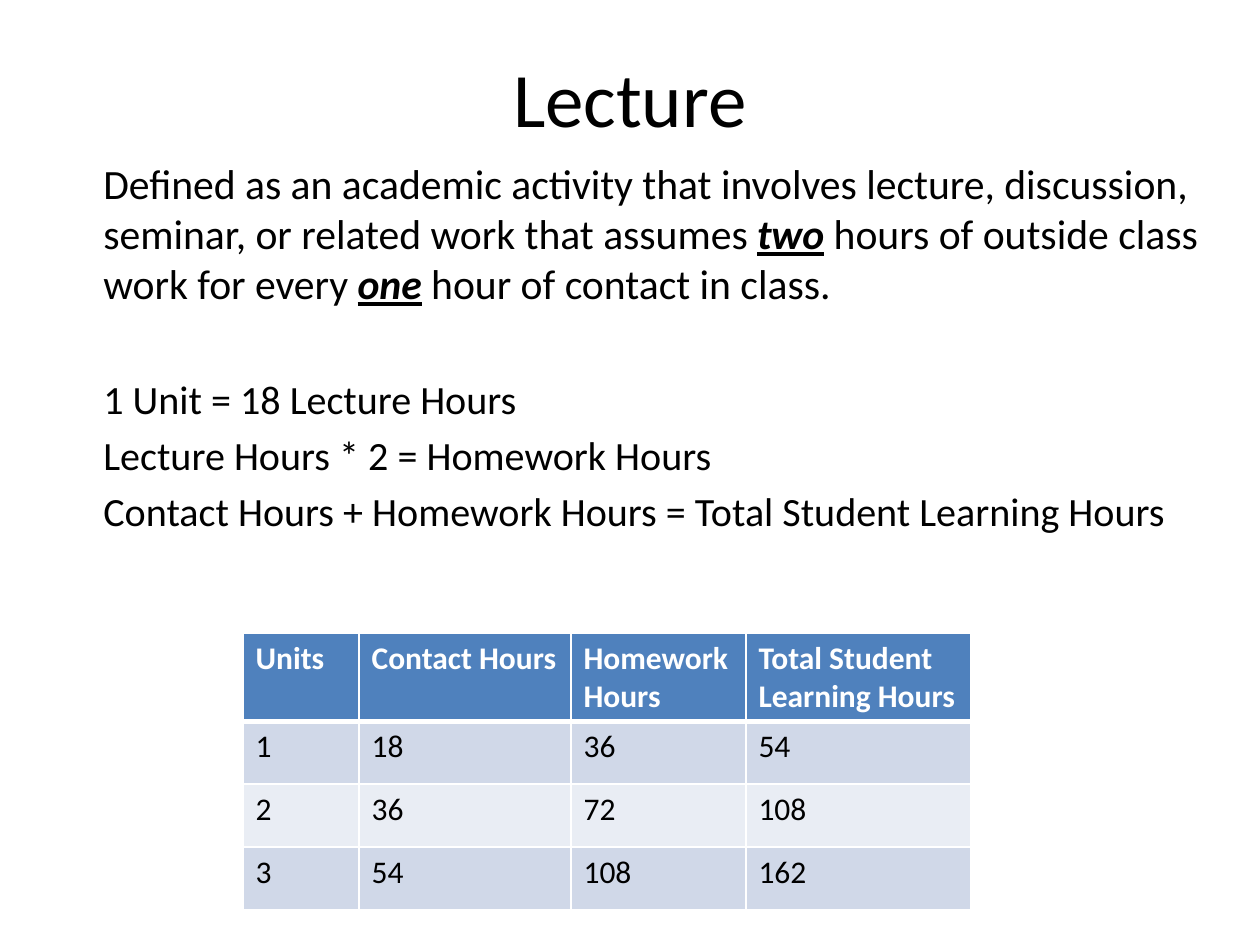
import lxml.etree
import pptx
import pptx.dml.color
import pptx.enum.text
import pptx.oxml.ns
import pptx.util

THEME = {
    "font": "Calibri",
    "text": "000000",
    "header_text": "FFFFFF",
    "header_fill": "4F81BD",
    "bands": ("D0D8E8", "E9EDF4"),
    "border": "FFFFFF",
    "title_size": 44,
    "definition_size": 23.8,
    "formula_size": 22.9,
    "table_size": 18,
}
EMPHASIS = {"bold": True, "italic": True, "underline": True}

DEFINITION = [
    ("Defined as an academic activity that involves lecture, discussion, "
     "seminar, or related work that assumes ", {}),
    ("two", EMPHASIS),
    (" hours of outside class work for every ", {}),
    ("one", EMPHASIS),
    (" hour of contact in class.", {}),
]
FORMULAS = [
    "1 Unit = 18 Lecture Hours",
    "Lecture Hours * 2 = Homework Hours",
    "Contact Hours + Homework Hours = Total Student Learning Hours",
]
HOURS = [
    ("Units", "Contact Hours", "Homework Hours", "Total Student Learning Hours"),
    ("1", "18", "36", "54"),
    ("2", "36", "72", "108"),
    ("3", "54", "108", "162"),
]
COLUMN_WIDTHS = (116, 212, 175, 225)
ROW_HEIGHTS = (88, 63, 63, 63)


def px(length):
    return pptx.util.Emu(round(length * 914400 / 126))


def rgb(value):
    return pptx.dml.color.RGBColor.from_string(value)


def add_run(paragraph, text, size, color=THEME["text"], **formats):
    run = paragraph.add_run()
    run.text = text
    values = {"name": THEME["font"], "size": pptx.util.Pt(size), **formats}
    for key, value in values.items():
        setattr(run.font, key, value)
    run.font.color.rgb = rgb(color)


def add_text_frame(slide, left, top, width, height, anchor):
    frame = slide.shapes.add_textbox(*map(px, (left, top, width, height))).text_frame
    frame.word_wrap = True
    frame.vertical_anchor = anchor
    return frame


def add_title(slide):
    frame = add_text_frame(slide, 63, 18, 1134, 158, pptx.enum.text.MSO_ANCHOR.MIDDLE)
    title = frame.paragraphs[0]
    title.alignment = pptx.enum.text.PP_ALIGN.CENTER
    add_run(title, "Lecture", THEME["title_size"])


def add_body(slide):
    frame = add_text_frame(slide, 28, 152, 1202, 440, pptx.enum.text.MSO_ANCHOR.TOP)
    definition = frame.paragraphs[0]
    for text, formats in DEFINITION:
        add_run(definition, text, THEME["definition_size"], **formats)

    # The wider gap sets the formulas apart from the definition
    for index, text in enumerate(FORMULAS):
        formula = frame.add_paragraph()
        formula.space_before = pptx.util.Pt(4.5 if index else 38)
        add_run(formula, text, THEME["formula_size"])

    for paragraph in frame.paragraphs:
        paragraph._p.get_or_add_pPr().set("marL", str(px(63)))


def set_borders(cell, widths):
    properties = cell._tc.get_or_add_tcPr()
    for index, (side, width) in enumerate(widths.items()):
        line = lxml.etree.Element(pptx.oxml.ns.qn(f"a:ln{side}"),
                                  w=str(pptx.util.Pt(width)))
        fill = lxml.etree.SubElement(line, pptx.oxml.ns.qn("a:solidFill"))
        lxml.etree.SubElement(fill, pptx.oxml.ns.qn("a:srgbClr"), val=THEME["border"])
        properties.insert(index, line)


def add_hours_table(slide):
    table = slide.shapes.add_table(
        len(HOURS), len(COLUMN_WIDTHS), px(243), px(633),
        px(sum(COLUMN_WIDTHS)), px(sum(ROW_HEIGHTS))).table
    for column, width in zip(table.columns, COLUMN_WIDTHS):
        column.width = px(width)
    for row, height in zip(table.rows, ROW_HEIGHTS):
        row.height = px(height)

    for row_index, values in enumerate(HOURS):
        header = row_index == 0
        fill = THEME["header_fill"] if header else THEME["bands"][(row_index - 1) % 2]
        color = THEME["header_text"] if header else THEME["text"]
        borders = {"L": 1, "R": 1,
                   "T": 3 if row_index == 1 else 1, "B": 3 if header else 1}
        for column_index, value in enumerate(values):
            cell = table.cell(row_index, column_index)
            cell.fill.solid()
            cell.fill.fore_color.rgb = rgb(fill)
            set_borders(cell, borders)
            add_run(cell.text_frame.paragraphs[0], value, THEME["table_size"],
                    color, bold=header)


def main():
    presentation = pptx.Presentation()
    presentation.slide_width = px(1260)
    presentation.slide_height = px(945)
    slide = presentation.slides.add_slide(presentation.slide_layouts[6])
    add_title(slide)
    add_body(slide)
    add_hours_table(slide)
    presentation.save("out.pptx")


if __name__ == "__main__":
    main()
